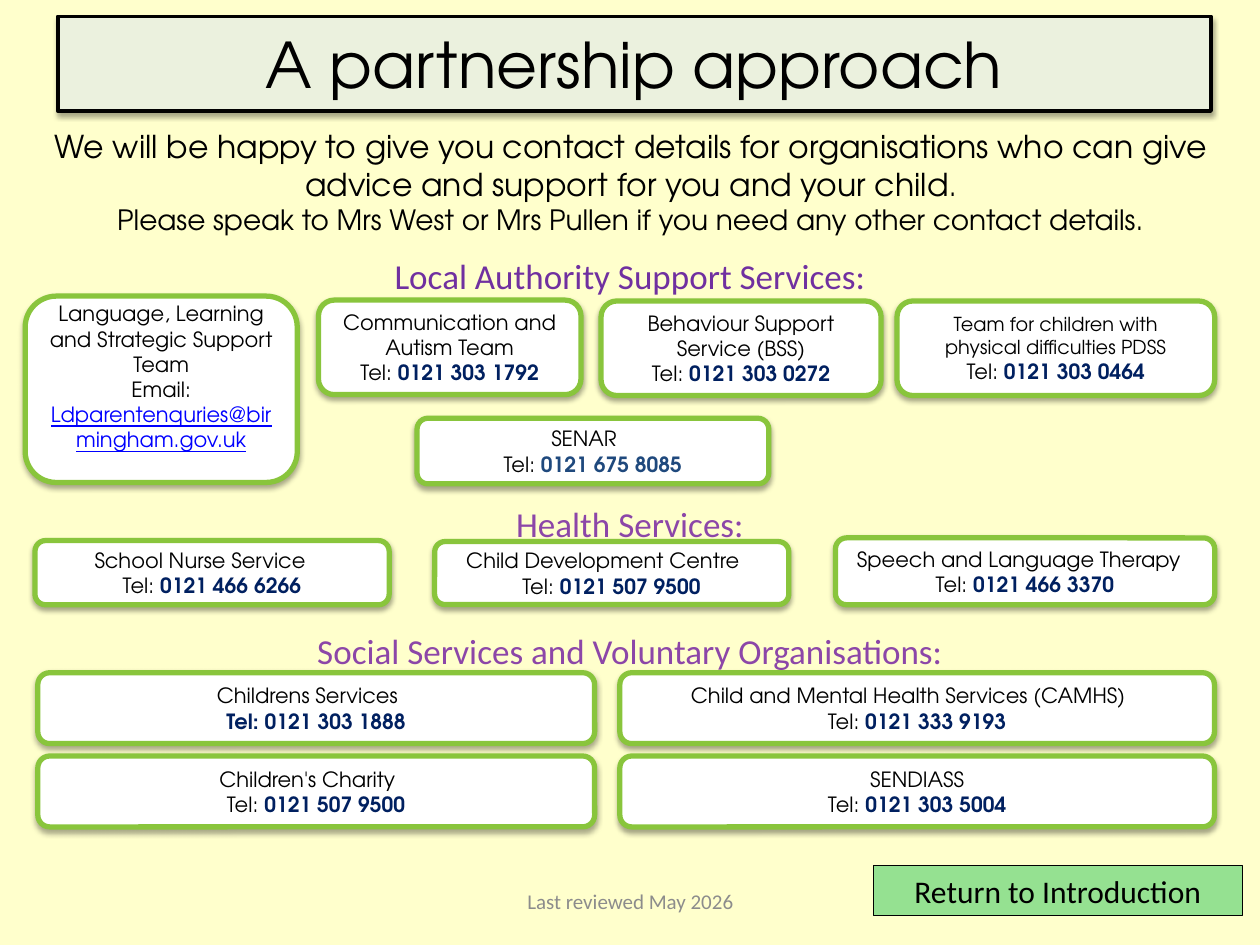
from dataclasses import dataclass

from lxml.etree import SubElement
from pptx import Presentation
from pptx.dml.color import RGBColor
from pptx.enum.shapes import MSO_SHAPE as Shape
from pptx.enum.text import MSO_ANCHOR as Anchor, PP_ALIGN as Align
from pptx.oxml.ns import qn
from pptx.util import Pt


@dataclass(frozen=True)
class Theme:
    """Colours, fonts and type sizes of the slide."""
    page: str = "FFFFCC"
    banner: str = "EBF1DE"
    button: str = "95E191"
    card: str = "FFFFFF"
    card_line: str = "89C53C"
    ink: str = "000000"
    number: str = "002060"
    number_light: str = "1F497D"
    link: str = "0000FF"
    local: str = "7030A0"
    other: str = "8C46A8"
    muted: str = "8C8C8C"
    display: str = "TeX Gyre Adventor"
    plain: str = "Calibri"
    title: int = 36
    heading: int = 20
    lead: int = 18
    note: int = 16
    body: int = 12
    small: int = 11


THEME = Theme()
INSET = 7.2


@dataclass(frozen=True)
class Service:
    """One contact card, placed relative to its region; lag narrows the name line."""
    box: tuple
    name: str
    number: str
    lag: float = 0
    name_size: int = THEME.body
    label_color: str = THEME.ink
    label_bold: bool = False
    number_color: str = THEME.number


def style(run, size, color=THEME.ink, font=THEME.display, bold=False):
    """Set the font of a run."""
    run.font.size, run.font.name, run.font.bold = Pt(size), font, bold
    run.font.color.rgb = RGBColor.from_string(color)


def write(paragraph, text, *look, **options):
    """Append a styled run to a centred paragraph."""
    paragraph.alignment = Align.CENTER
    run = paragraph.add_run()
    run.text = text
    style(run, *look, **options)
    return run


def add_shadow(shape):
    """Give a shape a soft shadow straight below it."""
    effects = shape.element.spPr.find(qn("a:effectLst"))
    shadow = SubElement(effects, qn("a:outerShdw"), blurRad=str(Pt(3.1)),
                        dist=str(Pt(1.8)), dir="5400000", rotWithShape="0")
    color = SubElement(shadow, qn("a:srgbClr"), val=THEME.ink)
    SubElement(color, qn("a:alpha"), val="35000")


def add_panel(slide, box, kind, fill, line, weight, shadow=True):
    """Add a filled, outlined shape and return its text frame."""
    panel = slide.shapes.add_shape(kind, *map(Pt, box))
    panel.fill.solid()
    panel.fill.fore_color.rgb = RGBColor.from_string(fill)
    panel.line.color.rgb = RGBColor.from_string(line)
    panel.line.width = Pt(weight)
    panel.shadow.inherit = False
    if shadow:
        add_shadow(panel)
    frame = panel.text_frame
    frame.word_wrap, frame.vertical_anchor = True, Anchor.MIDDLE
    return frame


def add_label(slide, box, anchor=Anchor.TOP):
    """Add a wrapping text box and return its text frame."""
    frame = slide.shapes.add_textbox(*map(Pt, box)).text_frame
    frame.word_wrap, frame.vertical_anchor = True, anchor
    return frame


def add_card(slide, box):
    """Add a white rounded card and return its text frame."""
    return add_panel(slide, box, Shape.ROUNDED_RECTANGLE, THEME.card, THEME.card_line, 3)


def add_banner(slide, box):
    """Place the slide title."""
    frame = add_panel(slide, box, Shape.RECTANGLE, THEME.banner, THEME.ink, 2.25)
    write(frame.paragraphs[0], "A partnership approach", THEME.title)


def add_intro(slide, box):
    """Place the two introductory sentences."""
    frame = add_label(slide, box)
    offer = frame.paragraphs[0]
    write(offer, "We will be happy to give you contact details for organisations "
                 "who can give advice and support for you and your child", THEME.lead)
    write(offer, ".", THEME.note)
    write(frame.add_paragraph(), "Please speak to Mrs West or Mrs Pullen if you need "
                                 "any other contact details.", THEME.note)


def add_service(slide, origin, service):
    """Place one service card with its name and telephone number."""
    left, top, width, height = service.box
    frame = add_card(slide, (origin[0] + left, origin[1] + top, width, height))
    frame.margin_right = Pt(INSET + service.lag)
    write(frame.paragraphs[0], service.name, service.name_size)
    phone = frame.add_paragraph()
    if service.lag:
        phone._p.get_or_add_pPr().set("marL", str(Pt(service.lag)))
    write(phone, "Tel: ", THEME.body, service.label_color, bold=service.label_bold)
    write(phone, service.number, THEME.body, service.number_color, bold=True)


def add_region(slide, box, heading, color, services):
    """Place a heading across the region and the service cards below it."""
    left, top, width, _ = box
    title = add_label(slide, (left, top, width, 32))
    write(title.paragraphs[0], heading, THEME.heading, color, THEME.plain)
    for service in services:
        add_service(slide, (left, top), service)


def add_language_team(slide, box):
    """Place the language team card with its e-mail address."""
    frame = add_card(slide, box)
    frame.margin_bottom = Pt(18)
    write(frame.paragraphs[0], "Language, Learning and Strategic Support Team", THEME.body)
    email = frame.add_paragraph()
    write(email, "Email: ", THEME.body)
    address = write(email, "Ldparentenquries@birmingham.gov.uk", THEME.body, THEME.link)
    address.font.underline = True


def add_footer(slide, box):
    """Place the review date and the return button."""
    left, top, _, _ = box
    review = add_label(slide, (left + 246.2, top + 5.8, 228.2, 28.8), Anchor.MIDDLE)
    write(review.paragraphs[0], "Last reviewed May 2026", THEME.body, THEME.muted, THEME.plain)
    button = add_panel(slide, (left + 499, top, 211, 28.8), Shape.RECTANGLE,
                       THEME.button, THEME.ink, 0.75, shadow=False)
    write(button.paragraphs[0], "Return to Introduction", THEME.lead, font=THEME.plain)


LOCAL = [
    Service((182, 29.5, 150, 54), "Communication and Autism Team", "0121 303 1792"),
    Service((343.5, 30, 160, 54), "Behaviour Support Service (BSS)", "0121 303 0272"),
    Service((512.6, 30, 181.5, 54), "Team for children with physical difficulties PDSS",
            "0121 303 0464", name_size=THEME.small),
    Service((238.3, 97, 201, 37.5), "SENAR", "0121 675 8085", 10,
            number_color=THEME.number_light),
]
HEALTH = [
    Service((20, 25.2, 202.4, 36.7), "School Nurse Service", "0121 466 6266", 13.5),
    Service((248.4, 25.8, 202.4, 36), "Child Development Centre", "0121 507 9500", 10),
    Service((477.4, 23.7, 216.7, 38.2), "Speech and Language Therapy", "0121 466 3370", 7),
]
COLUMNS = [(21.6, 318.2), (354.2, 339.8)]
ROWS = [28, 75.6]
SOCIAL_CELLS = [(left, top, width, 40.5) for top in ROWS for left, width in COLUMNS]
SOCIAL = [
    Service(SOCIAL_CELLS[0], "Childrens Services", "0121 303 1888", 10,
            label_color=THEME.number, label_bold=True),
    Service(SOCIAL_CELLS[1], "Child and Mental Health Services (CAMHS)", "0121 333 9193", 10),
    Service(SOCIAL_CELLS[2], "Children's Charity", "0121 507 9500", 10),
    Service(SOCIAL_CELLS[3], "SENDIASS", "0121 303 5004"),
]


def main():
    """Build and save the slide."""
    deck = Presentation()
    deck.slide_width, deck.slide_height = Pt(720), Pt(540)
    slide = deck.slides.add_slide(deck.slide_layouts[6])
    slide.background.fill.solid()
    slide.background.fill.fore_color.rgb = RGBColor.from_string(THEME.page)
    add_banner(slide, (33, 9.4, 659, 54))
    add_intro(slide, (0, 69, 721, 73))
    add_region(slide, (0, 142, 720, 135), "Local Authority Support Services:",
               THEME.local, LOCAL)
    add_language_team(slide, (14.4, 169.2, 155.5, 106.5))
    add_region(slide, (0, 283.7, 720, 62), "Health Services:", THEME.other, HEALTH)
    add_region(slide, (0, 356.4, 720, 116), "Social Services and Voluntary Organisations:",
               THEME.other, SOCIAL)
    add_footer(slide, (0, 494.6, 720, 35))
    deck.save("out.pptx")


if __name__ == "__main__":
    main()
